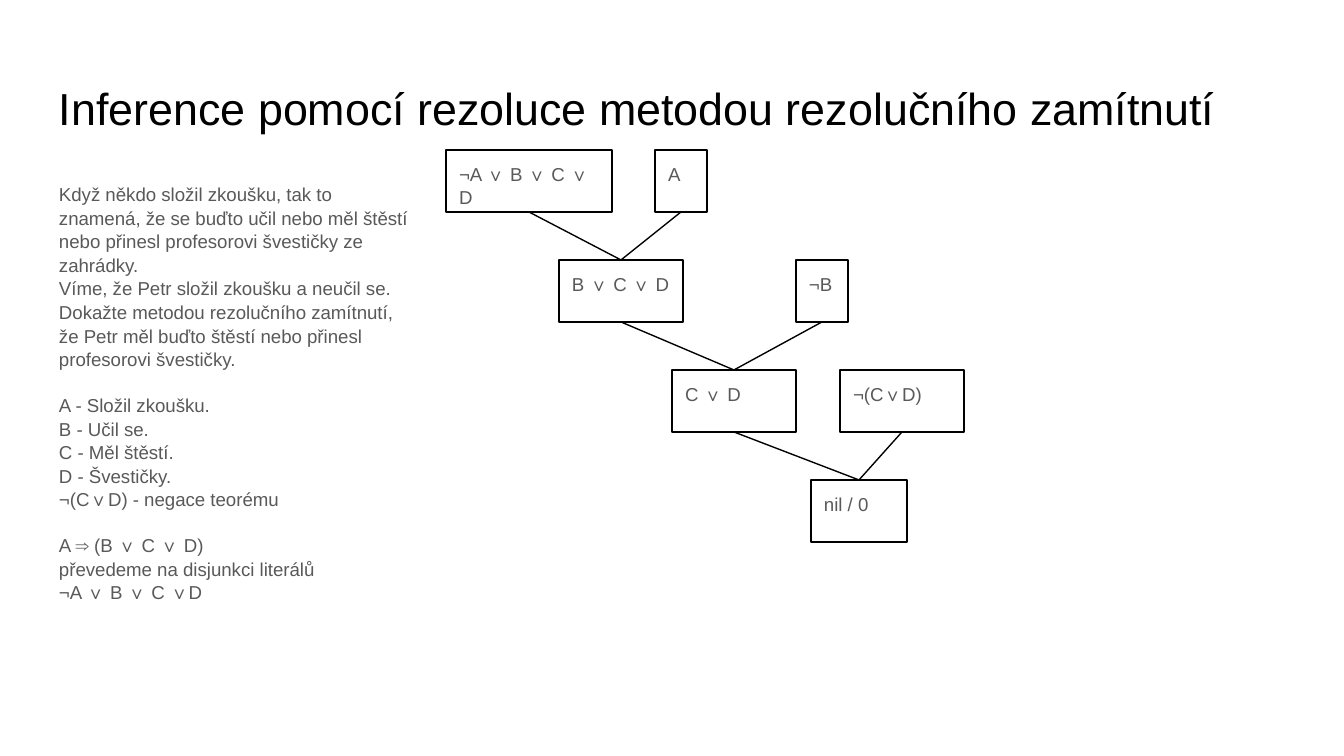
from lxml import etree
from pptx import Presentation
from pptx.dml.color import RGBColor
from pptx.enum.shapes import MSO_CONNECTOR, MSO_SHAPE
from pptx.enum.text import MSO_ANCHOR, MSO_AUTO_SIZE, PP_ALIGN
from pptx.oxml.ns import qn
from pptx.util import Pt

RECT, LINE = MSO_SHAPE.RECTANGLE, MSO_CONNECTOR.STRAIGHT
TOP, MID, LEFT = MSO_ANCHOR.TOP, MSO_ANCHOR.MIDDLE, PP_ALIGN.LEFT
FIXED = MSO_AUTO_SIZE.NONE
SCALE = 914400 / 134.4  # EMU in one px


class Theme:
    font = "Arial"
    ink = RGBColor(0, 0, 0)
    gray = RGBColor(0x59, 0x59, 0x59)
    head, text = Pt(24), Pt(10)
    gap = Pt(12)
    rule = Pt(0.75)


def px(*nums):
    return [round(n * SCALE) for n in nums]


def write(shape, lines, size, color, anchor=TOP):
    frame = shape.text_frame
    frame.word_wrap = True
    frame.auto_size = FIXED
    frame.vertical_anchor = anchor
    inset, = px(13)
    frame.margin_left = frame.margin_right = inset
    frame.margin_top = frame.margin_bottom = inset
    for i, line in enumerate(lines):
        para = frame.add_paragraph() if i else frame.paragraphs[0]
        para.alignment = LEFT
        para.space_before = para.space_after = Pt(0)
        run = para.add_run()
        run.text = line
        run.font.name, run.font.size = Theme.font, size
        run.font.color.rgb = color
    return frame.paragraphs


deck = Presentation()
deck.slide_width, deck.slide_height = px(1344, 756)
slide = deck.slides.add_slide(deck.slide_layouts[1])

# Title
title = slide.shapes.title
title.left, title.top, title.width, title.height = px(46, 66, 1252, 84)
write(title, ["Inference pomocí rezoluce metodou rezolučního zamítnutí"],
      Theme.head, Theme.ink, MID)

# Task, symbols and conversion
groups = [
    ["Když někdo složil zkoušku, tak to znamená, že se buďto učil nebo měl "
     "štěstí nebo přinesl profesorovi švestičky ze zahrádky.",
     "Víme, že Petr složil zkoušku a neučil se. Dokažte metodou rezolučního "
     "zamítnutí, že Petr měl buďto štěstí nebo přinesl profesorovi švestičky."],
    ["A - Složil zkoušku.", "B - Učil se.", "C - Měl štěstí.",
     "D - Švestičky.", "¬(C∨D) - negace teorému"],
    ["A ⇒ (B ∨ C ∨ D)", "převedeme na disjunkci literálů", "¬A ∨ B ∨ C ∨D"],
]
body = slide.placeholders[1]
body.left, body.top, body.width, body.height = px(46, 169, 384, 503)
paras = write(body, sum(groups, []), Theme.text, Theme.gray)
starts = [len(groups[0]), len(groups[0]) + len(groups[1])]
for i, para in enumerate(paras):
    para.line_spacing = 1.05
    if i in starts:
        para.space_before = Theme.gap
    props = para._p.get_or_add_pPr()
    props.set("marL", "0")
    props.set("indent", "0")
    etree.SubElement(props, qn("a:buNone"))

# Clauses of the proof: text, left, width, row
clauses = [
    ("¬A ∨ B ∨ C ∨ D", 446, 166, 0), ("A", 655, 52, 0),
    ("B ∨ C ∨ D", 559, 124, 1), ("¬B", 796, 52, 1),
    ("C ∨ D", 672, 124, 2), ("¬(C∨D)", 840, 124, 2),
    ("nil / 0", 811, 96, 3),
]
boxes = []
for text, left, width, row in clauses:
    box = slide.shapes.add_shape(RECT, *px(left, 150 + 110 * row, width, 62))
    box.shadow.inherit = False
    box.fill.background()
    box.line.color.rgb, box.line.width = Theme.ink, Theme.rule
    write(box, [text], Theme.text, Theme.gray)
    boxes.append(box)

# Each pair of clauses resolves to the first box of the next row
for i, box in enumerate(boxes[:-1]):
    link = slide.shapes.add_connector(LINE, 0, 0, 0, 0)
    link.begin_connect(box, 2)
    link.end_connect(boxes[i // 2 * 2 + 2], 0)
    link.line.color.rgb, link.line.width = Theme.ink, Theme.rule
    etree.SubElement(link._element.spPr, qn("a:effectLst"))

deck.save("out.pptx")
